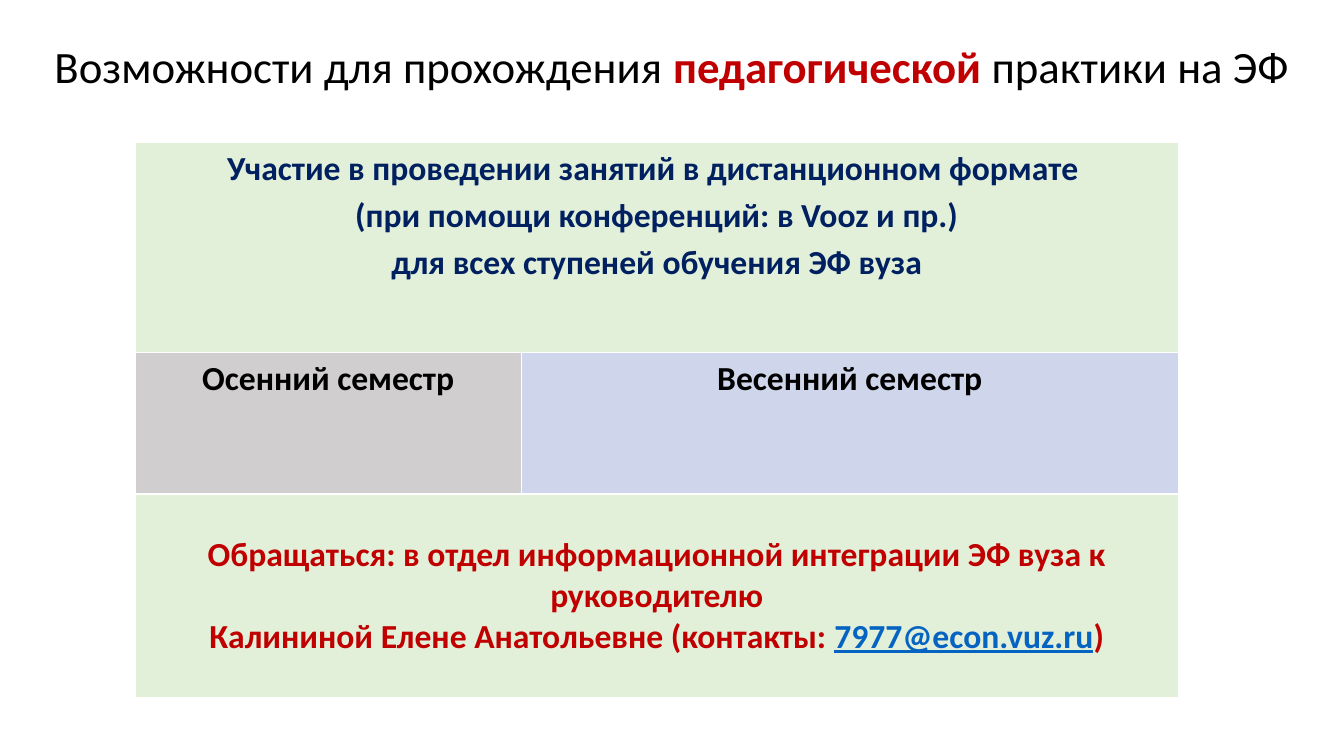
from pptx import Presentation
from pptx.dml.color import RGBColor
from pptx.enum.text import MSO_ANCHOR, MSO_AUTO_SIZE, PP_ALIGN
from pptx.util import Pt

LEFT, CENTER = PP_ALIGN.LEFT, PP_ALIGN.CENTER
TOP, MIDDLE = MSO_ANCHOR.TOP, MSO_ANCHOR.MIDDLE
NO_FIT = MSO_AUTO_SIZE.NONE

BLACK, RED, NAVY, LINK = "000000", "C00000", "002060", "0563C1"
GREEN, GRAY, BLUE = "E2F0D9", "D0CECE", "CFD5EA"


def rgb(value):
    return RGBColor.from_string(value)


def write(tf, paragraphs, size, align, spacing):
    """Fill a text frame; each paragraph is a list of (text, font values)."""
    for i, runs in enumerate(paragraphs):
        p = tf.paragraphs[0] if i == 0 else tf.add_paragraph()
        p.alignment, p.line_spacing = align, spacing
        for text, values in runs:
            r = p.add_run()
            r.text = text
            font = {"name": "Calibri", "size": Pt(size), "bold": True, **values}
            r.font.color.rgb = rgb(font.pop("color"))
            for name, value in font.items():
                setattr(r.font, name, value)


prs = Presentation()
prs.slide_width, prs.slide_height = Pt(960), Pt(540)
s = prs.slides.add_slide(prs.slide_layouts[5])

title = s.shapes.title
title.left, title.top, title.width, title.height = Pt(31.7), Pt(10.8), Pt(911.5), Pt(76.3)
tf = title.text_frame
tf.word_wrap, tf.auto_size, tf.vertical_anchor = True, NO_FIT, MIDDLE
plain = {"color": BLACK, "bold": False}
write(tf, [[
    ("Возможности для прохождения ", plain),
    ("педагогической ", {"color": RED}),
    ("практики на ЭФ", plain),
]], 32, LEFT, 0.9)

col_widths = [275.8, 469.4]
row_heights = [150.5, 100.8, 145.4]
table = s.shapes.add_table(
    len(row_heights), len(col_widths), Pt(96.5), Pt(101.5),
    Pt(sum(col_widths)), Pt(sum(row_heights))).table
for col, width in zip(table.columns, col_widths):
    col.width = Pt(width)
for row, height in zip(table.rows, row_heights):
    row.height = Pt(height)
for i in (0, 2):
    table.cell(i, 0).merge(table.cell(i, 1))

participation = [[(line, {"color": NAVY})] for line in (
    "Участие в проведении занятий в дистанционном формате ",
    "(при помощи конференций: в Vooz и пр.)",
    "для всех ступеней обучения ЭФ вуза",
)]
contacts = [
    [("Обращаться: в отдел информационной интеграции ЭФ вуза к руководителю", {"color": RED})],
    [("Калининой Елене Анатольевне (контакты: ", {"color": RED}),
     ("7977@econ.vuz.ru", {"color": LINK, "underline": True}),
     (")", {"color": RED})],
]
cells = [
    (0, 0, GREEN, TOP, 1.15, participation),
    (1, 0, GRAY, TOP, 1.15, [[("Осенний семестр", {"color": BLACK})]]),
    (1, 1, BLUE, TOP, 1.15, [[("Весенний семестр", {"color": BLACK})]]),
    (2, 0, GREEN, MIDDLE, 1.0, contacts),
]
for row, col, fill, anchor, spacing, paragraphs in cells:
    cell = table.cell(row, col)
    cell.margin_left = cell.margin_right = Pt(5)
    cell.margin_top = cell.margin_bottom = Pt(0)
    cell.vertical_anchor = anchor
    cell.fill.solid()
    cell.fill.fore_color.rgb = rgb(fill)
    write(cell.text_frame, paragraphs, 24, CENTER, spacing)

prs.save("out.pptx")
